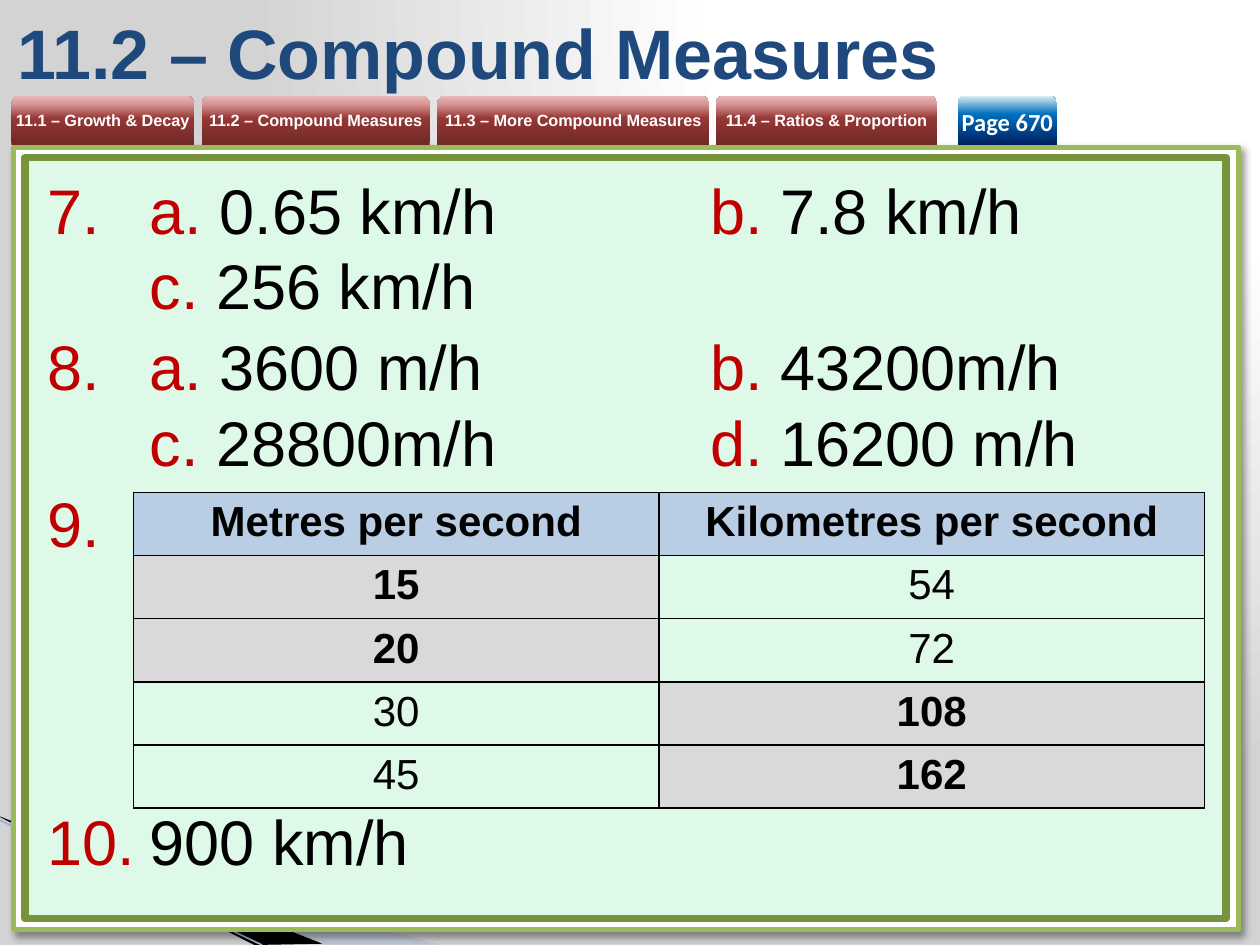
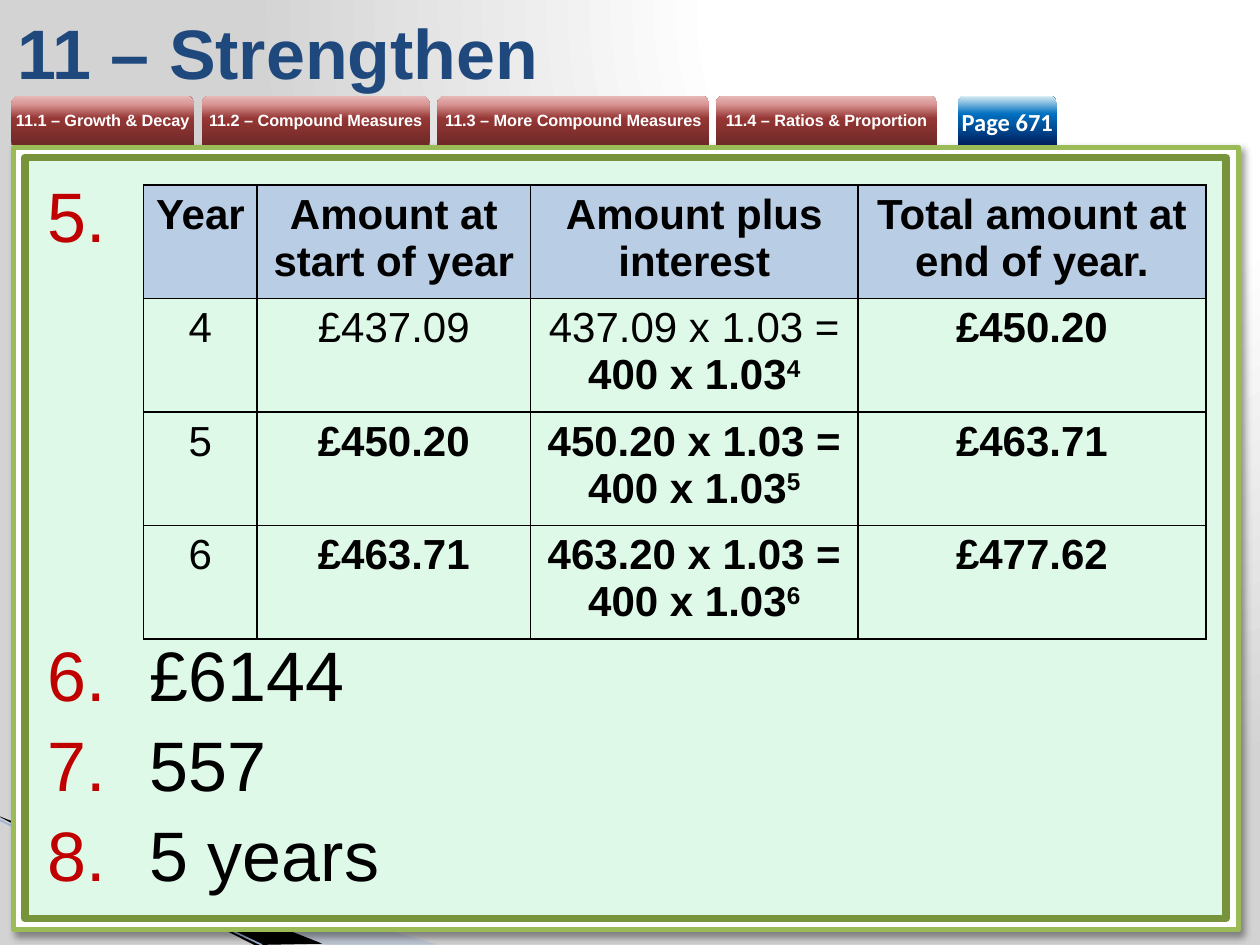
import lxml.etree
import pptx
import pptx.dml.color
import pptx.enum.shapes
import pptx.enum.text
import pptx.oxml
import pptx.oxml.ns
import pptx.util

Inches = pptx.util.Inches
Pt = pptx.util.Pt
SHAPE = pptx.enum.shapes.MSO_SHAPE
ALIGN = pptx.enum.text.PP_ALIGN
ANCHOR = pptx.enum.text.MSO_ANCHOR

# ---- Content ----
TABS = [  # label, left, width
    ("11.1 – Growth & Decay", 0.09, 1.45),
    ("11.2 – Compound Measures", 1.6, 1.81),
    ("11.3 – More Compound Measures", 3.47, 2.16),
    ("11.4 – Ratios & Proportion", 5.68, 1.76),
]

# An answer is a list of lines; a line is a list of (part label, value).
# TABLE_GAP marks the question that is answered by the table.
TABLE_GAP = None

# A table cell is a list of (text, style): b is bold, s is superscript.
SPEED_TABLE = {
    "at": (1.06, 3.91), "columns": [4.17, 4.33], "row_height": 0.5,
    "shaded": {(1, 0), (2, 0), (3, 1), (4, 1)},
    "rows": [
        [[("Metres per second", "b")], [("Kilometres per second", "b")]],
        [[("15", "b")], [("54", "")]],
        [[("20", "b")], [("72", "")]],
        [[("30", "")], [("108", "b")]],
        [[("45", "")], [("162", "b")]],
    ],
}
INTEREST_TABLE = {
    "at": (1.14, 1.47), "columns": [0.9, 2.17, 2.6, 2.76], "row_height": 0.9,
    "shaded": set(),
    "rows": [
        [[("Year", "b")], [("Amount at start of year", "b")],
         [("Amount plus interest", "b")], [("Total amount at end of year.", "b")]],
        [[("4", "")], [("£437.09", "")],
         [("437.09 x 1.03 = ", ""), ("400 x 1.03", "b"), ("4", "bs")], [("£450.20", "b")]],
        [[("5", "")], [("£450.20", "b")],
         [("450.20 x 1.03 = 400 x 1.03", "b"), ("5", "bs")], [("£463.71", "b")]],
        [[("6", "")], [("£463.71", "b")],
         [("463.20 x 1.03 = 400 x 1.03", "b"), ("6", "bs")], [("£477.62", "b")]],
    ],
}
PAGES = [
    {
        "title": "11.2 – Compound Measures", "book_page": "Page 670",
        "first_number": 7, "size": 36, "line": 43.2, "table_gap": 138.5,
        "answers": [
            [[("a. ", "0.65 km/h"), ("b. ", "7.8 km/h")], [("c. ", "256 km/h")]],
            [[("a. ", "3600 m/h"), ("b. ", "43200m/h")],
             [("c. ", "28800m/h"), ("d. ", "16200 m/h")]],
            TABLE_GAP,
            [[("", "900 km/h")]],
        ],
        "table": SPEED_TABLE,
    },
    {
        "title": "11 – Strengthen", "book_page": "Page 671",
        "first_number": 5, "size": 40, "line": 48.5, "table_gap": 213.8,
        "answers": [TABLE_GAP, [[("", "£6144")]], [[("", "557")]], [[("", "5 years")]]],
        "table": INTEREST_TABLE,
    },
]


# ---- Theme ----
class Theme:
    font, badge_font = "Arial", "Calibri"
    title_size, tab_size, badge_size, table_size = 40, 9.3, 14, 24
    title, label, text, white = "1F497D", "C00000", "000000", "FFFFFF"
    frame_line, panel, panel_line = "9BBB59", "DFF9E8", "77933C"
    header, shaded = "B9CDE5", "D9D9D9"
    swoosh, swoosh_line = "A7B9DB", "9EB3D6"
    tab_stops = [(0, "6F2927"), (54, "953735"), (83, "D99694"), (100, "E6B9B8")]
    badge_stops = [(0, "002060"), (63, "0070C0"), (100, "DBEEF4")]
    page_stops = [(0, "FFFFFF"), (40, "FFFFFF"), (100, "D3D3D3")]
    upward = '<a:lin ang="16200000" scaled="0"/>'
    from_top_right = '<a:path path="circle"><a:fillToRect l="65000" t="0" r="0" b="98000"/></a:path>'


# ---- Helpers ----
def color(value):
    return pptx.dml.color.RGBColor.from_string(value)


def xml(tag, inner="", **attributes):
    listed = "".join(f' {name}="{value}"' for name, value in attributes.items())
    namespace = pptx.oxml.ns.nsdecls("a")
    return pptx.oxml.parse_xml(f"<a:{tag} {namespace}{listed}>{inner}</a:{tag}>")


def fill_gradient(owner, fill, stops, direction):
    fill.gradient()
    old = owner._element.find(".//" + pptx.oxml.ns.qn("a:gradFill"))
    listed = "".join(f'<a:gs pos="{place * 1000}"><a:srgbClr val="{value}"/></a:gs>'
                     for place, value in stops)
    old.getparent().replace(old, xml("gradFill", f"<a:gsLst>{listed}</a:gsLst>{direction}",
                                     rotWithShape=1))


def add_span(para, text, size, value, bold=False, font=Theme.font):
    span = para.add_run()
    span.text = text
    span.font.name, span.font.size, span.font.bold = font, Pt(size), bold
    span.font.color.rgb = color(value)
    return span


def add_panel(page, place, fill, line, width):
    panel = page.shapes.add_shape(SHAPE.RECTANGLE, *map(Inches, place))
    panel.shadow.inherit = False
    panel.fill.solid()
    panel.fill.fore_color.rgb = color(fill)
    panel.line.color.rgb = color(line)
    panel.line.width = Pt(width)
    return panel


def add_tab(page, label, left, width, stops, size, font=Theme.font, line=None):
    tab = page.shapes.add_shape(SHAPE.ROUND_2_SAME_RECTANGLE, Inches(left), Inches(0.76),
                                Inches(width), Inches(0.39))
    tab.shadow.inherit = False
    fill_gradient(tab, tab.fill, stops, Theme.upward)
    tab.line.fill.background()
    frame = tab.text_frame
    frame.margin_left = frame.margin_right = frame.margin_top = frame.margin_bottom = 0
    frame.word_wrap = False
    frame.vertical_anchor = ANCHOR.MIDDLE
    para = frame.paragraphs[0]
    para.alignment = ALIGN.CENTER
    para.line_spacing = line
    add_span(para, label, size, Theme.white, True, font)


def add_swoosh(page, points, value):
    corners = [(Inches(x), Inches(y)) for x, y in points]
    builder = page.shapes.build_freeform(*corners[0])
    builder.add_line_segments(corners[1:], close=True)
    swoosh = builder.convert_to_shape()
    swoosh.shadow.inherit = False
    swoosh.fill.solid()
    swoosh.fill.fore_color.rgb = color(value)
    swoosh.line.fill.background()
    return swoosh


# ---- Shared page parts ----
def add_backdrop(page):
    fill_gradient(page, page.background.fill, Theme.page_stops, Theme.from_top_right)

    # Corner swooshes
    pale = add_swoosh(page, [(0, 6.5), (3.49, 7.5), (2.59, 7.5), (0, 6.49)], Theme.swoosh)
    tint = pale._element.spPr.find(".//" + pptx.oxml.ns.qn("a:srgbClr"))
    tint.append(xml("alpha", val=40000))
    add_swoosh(page, [(0, 6.48), (2.56, 7.49), (2.02, 7.5), (0.01, 6.49)], Theme.text)
    edge = page.shapes.add_connector(pptx.enum.shapes.MSO_CONNECTOR.STRAIGHT, 0, Inches(6.51),
                                     Inches(2.08), Inches(7.5))
    edge.line.color.rgb = color(Theme.swoosh_line)
    edge.line.width = Pt(0.95)
    edge._element.spPr.append(xml("effectLst"))

    # Framed panel
    frame = add_panel(page, (0.11, 1.17, 9.72, 6.21), Theme.white, Theme.frame_line, 3)
    shadow = xml("outerShdw", '<a:srgbClr val="000000"><a:alpha val="40000"/></a:srgbClr>',
                 blurRad=Pt(4), dist=Pt(3), dir=45 * 60000, algn="tl", rotWithShape=0)
    frame._element.spPr.find(pptx.oxml.ns.qn("a:effectLst")).append(shadow)
    add_panel(page, (0.2, 1.25, 9.53, 6.04), Theme.panel, Theme.panel_line, 4.33)

    # Section tabs
    for label, left, width in TABS:
        add_tab(page, label, left, width, Theme.tab_stops, Theme.tab_size, line=Pt(10))


def add_title(page, text):
    box = page.shapes.add_textbox(Inches(0.04), Inches(0.05), Inches(8.43), Inches(0.71))
    box.text_frame.word_wrap = True
    box.text_frame.vertical_anchor = ANCHOR.MIDDLE
    add_span(box.text_frame.paragraphs[0], text, Theme.title_size, Theme.title, True)


# ---- Answers and tables ----
def format_answer(para, content):
    properties = para._p.get_or_add_pPr()
    properties.set("marL", str(Inches(0.81)))
    properties.set("indent", str(-Inches(0.81)))
    properties.append(xml("buClr", f'<a:srgbClr val="{Theme.label}"/>'))
    properties.append(xml("buFont", typeface=Theme.font))
    properties.append(xml("buAutoNum", type="arabicPeriod", startAt=content["first_number"]))
    properties.append(xml("tabLst", f'<a:tab pos="{Inches(5.26)}" algn="l"/>'))
    para.line_spacing = Pt(content["line"])
    para.space_after = Pt(3)


def add_answers(page, content):
    box = page.shapes.add_textbox(Inches(0.28), Inches(1.31), Inches(9.37), Inches(6.02))
    box.text_frame.word_wrap = True
    size = content["size"]
    for number, answer in enumerate(content["answers"]):
        para = box.text_frame.add_paragraph() if number else box.text_frame.paragraphs[0]
        format_answer(para, content)
        if answer is TABLE_GAP:
            add_span(para, " ", size, Theme.text)
            para.space_after = Pt(content["table_gap"])
            continue
        for line_number, line in enumerate(answer):
            if line_number:
                para.add_line_break()
            for part, (label, value) in enumerate(line):
                if part:
                    add_span(para, "\t", size, Theme.text)
                if label:
                    add_span(para, label, size, Theme.label)
                add_span(para, value, size, Theme.text)


def fill_cell(cell, spans, fill):
    cell.margin_left = cell.margin_right = cell.margin_top = cell.margin_bottom = Inches(0.05)
    para = cell.text_frame.paragraphs[0]
    para.alignment = ALIGN.CENTER
    for text, style in spans:
        span = add_span(para, text, Theme.table_size, Theme.text, "b" in style)
        if "s" in style:
            span._r.get_or_add_rPr().set("baseline", "30000")
    properties = cell._tc.get_or_add_tcPr()
    for side in ("lnL", "lnR", "lnT", "lnB"):
        border = f'<a:solidFill><a:srgbClr val="{Theme.text}"/></a:solidFill>'
        properties.append(xml(side, border, w=Pt(1)))
    if fill:
        cell.fill.solid()
        cell.fill.fore_color.rgb = color(fill)
    else:
        cell.fill.background()


def add_answer_table(page, content):
    rows, columns = content["rows"], content["columns"]
    left, top = content["at"]
    height = content["row_height"]
    table = page.shapes.add_table(len(rows), len(columns), Inches(left), Inches(top),
                                  Inches(sum(columns)), Inches(height * len(rows))).table
    table.first_row = table.horz_banding = False
    for column, width in zip(table.columns, columns):
        column.width = Inches(width)
    for r, row in enumerate(rows):
        table.rows[r].height = Inches(height)
        for c, spans in enumerate(row):
            fill = Theme.shaded if (r, c) in content["shaded"] else None
            fill_cell(table.cell(r, c), spans, fill if r else Theme.header)


def main():
    deck = pptx.Presentation()
    deck.slide_width, deck.slide_height = Inches(10), Inches(7.5)
    for content in PAGES:
        page = deck.slides.add_slide(deck.slide_layouts[6])
        add_backdrop(page)
        add_title(page, content["title"])
        add_tab(page, content["book_page"], 7.6, 0.79, Theme.badge_stops,
                Theme.badge_size, Theme.badge_font)
        add_answers(page, content)
        add_answer_table(page, content["table"])
    deck.save("out.pptx")


if __name__ == "__main__":
    main()
